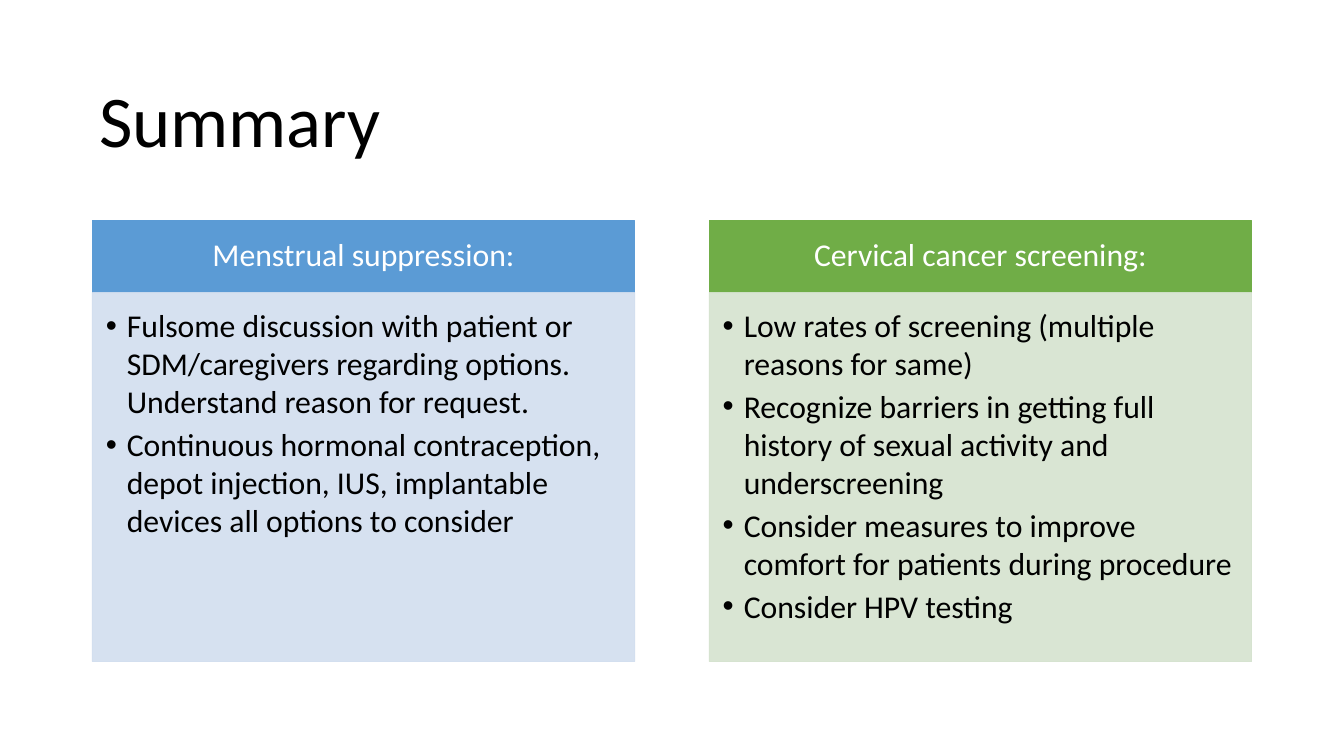
"""Build a summary slide with two headed columns of bullet points."""
import pptx
import pptx.dml.color
import pptx.enum.shapes
import pptx.enum.text
import pptx.oxml.ns
import pptx.util
from lxml import etree

Pt = pptx.util.Pt
Align = pptx.enum.text.PP_ALIGN
Anchor = pptx.enum.text.MSO_ANCHOR
qn = pptx.oxml.ns.qn

TITLE = "Summary"
COLUMNS = [
    {
        "heading": "Menstrual suppression:",
        "dark": "5B9BD5",
        "pale": "D2DEEF",
        "points": [
            "Fulsome discussion with patient or SDM/caregivers regarding options. "
            "Understand reason for request.",
            "Continuous hormonal contraception, depot injection, IUS, implantable "
            "devices all options to consider",
        ],
    },
    {
        "heading": "Cervical cancer screening:",
        "dark": "70AD47",
        "pale": "D5E3CF",
        "points": [
            "Low rates of screening (multiple reasons for same)",
            "Recognize barriers in getting full history of sexual activity and underscreening",
            "Consider measures to improve comfort for patients during procedure",
            "Consider HPV testing",
        ],
    },
]

FONT = "Calibri"
LEFT, CONTENT_WIDTH, COLUMN_WIDTH = 99, 1242, 581
COLUMN_STEP = CONTENT_WIDTH - COLUMN_WIDTH
TITLE_TOP, TITLE_HEIGHT = 65.5, 134
HEADING_TOP, HEADING_HEIGHT, BODY_HEIGHT = 236.5, 77, 395.3
INDENT = 22.5

TITLE_FORMAT = {"size": 78, "color": "000000", "line_spacing": 0.9}
HEADING_FORMAT = {"size": 34, "color": "FFFFFF", "line_spacing": 0.9, "alignment": Align.CENTER}
BODY_FORMAT = {"size": 34, "color": "000000", "line_spacing": 1.0, "space_after": Pt(5.1)}


def rgb(value):
    return pptx.dml.color.RGBColor.from_string(value)


def set_frame(shape, anchor, margins):
    sides = ("margin_left", "margin_top", "margin_right", "margin_bottom")
    values = dict(zip(sides, map(Pt, margins)), word_wrap=True, vertical_anchor=anchor)
    for name, value in values.items():
        setattr(shape.text_frame, name, value)


def write(shape, texts, formats, bulleted=False):
    settings = {"alignment": Align.LEFT, **formats}
    size, color = settings.pop("size"), settings.pop("color")
    frame = shape.text_frame
    for index, text in enumerate(texts):
        paragraph = frame.add_paragraph() if index else frame.paragraphs[0]
        for name, value in settings.items():
            setattr(paragraph, name, value)
        if bulleted:
            properties = paragraph._p.get_or_add_pPr()
            properties.set("marL", str(Pt(INDENT)))
            properties.set("indent", str(-Pt(INDENT)))
            etree.SubElement(properties, qn("a:buFont")).set("typeface", "Arial")
            etree.SubElement(properties, qn("a:buChar")).set("char", "•")
        run = paragraph.add_run()
        run.text = text
        for name, value in {"name": FONT, "size": Pt(size)}.items():
            setattr(run.font, name, value)
        run.font.color.rgb = rgb(color)


def add_panel(slide, left, top, height, color, opacity=100):
    shape = slide.shapes.add_shape(
        pptx.enum.shapes.MSO_SHAPE.RECTANGLE, Pt(left), Pt(top), Pt(COLUMN_WIDTH), Pt(height)
    )
    shape.shadow.inherit = False
    shape.fill.solid()
    shape.fill.fore_color.rgb = rgb(color)
    shape.line.color.rgb = rgb(color)
    shape.line.width = Pt(1)
    if opacity < 100:
        for element in shape._element.spPr.iter(qn("a:srgbClr")):
            etree.SubElement(element, qn("a:alpha")).set("val", str(opacity * 1000))
    return shape


def add_column(slide, left, column):
    heading = add_panel(slide, left, HEADING_TOP, HEADING_HEIGHT, column["dark"])
    set_frame(heading, Anchor.MIDDLE, (18.7, 10.8, 18.7, 10.8))
    write(heading, [column["heading"]], HEADING_FORMAT)
    body = add_panel(slide, left, HEADING_TOP + HEADING_HEIGHT, BODY_HEIGHT, column["pale"], 90)
    set_frame(body, Anchor.TOP, (14.4, 14.4, 18.7, 21.6))
    write(body, column["points"], BODY_FORMAT, bulleted=True)


def main():
    presentation = pptx.Presentation()
    presentation.slide_width, presentation.slide_height = Pt(1440), Pt(810)
    slide = presentation.slides.add_slide(presentation.slide_layouts[6])
    title = slide.shapes.add_textbox(Pt(LEFT), Pt(TITLE_TOP), Pt(CONTENT_WIDTH), Pt(TITLE_HEIGHT))
    set_frame(title, Anchor.MIDDLE, (7.2, 3.6, 7.2, 3.6))
    write(title, [TITLE], TITLE_FORMAT)
    for index, column in enumerate(COLUMNS):
        add_column(slide, LEFT + index * COLUMN_STEP, column)
    presentation.save("out.pptx")


if __name__ == "__main__":
    main()
